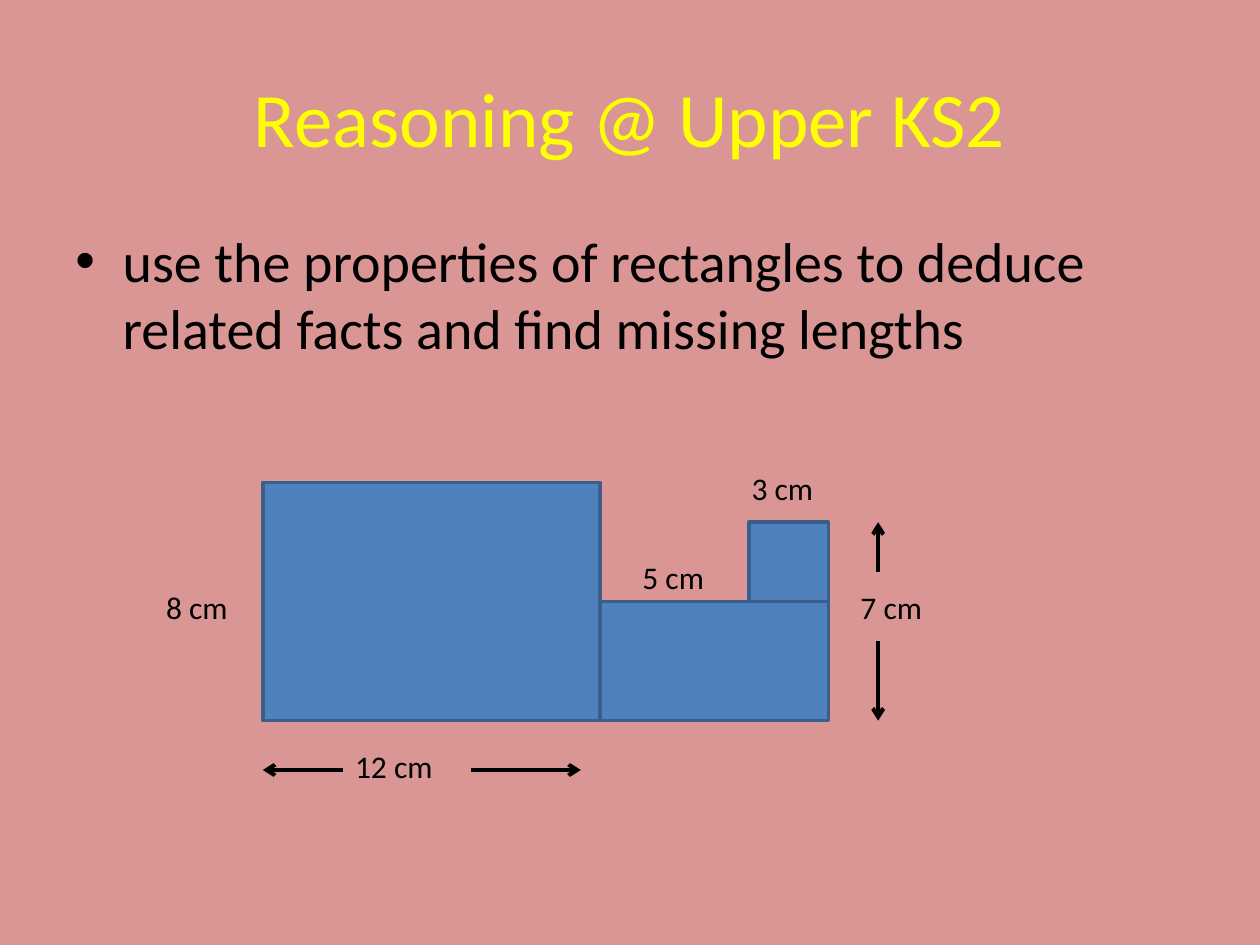
from dataclasses import dataclass

from lxml.etree import SubElement
from pptx import Presentation
from pptx.dml.color import RGBColor as Color
from pptx.enum.shapes import MSO_CONNECTOR as Connector, MSO_SHAPE as Shape
from pptx.enum.text import MSO_ANCHOR as Anchor, MSO_AUTO_SIZE as AutoSize, PP_ALIGN as Align
from pptx.oxml.ns import qn
from pptx.util import Pt


@dataclass(frozen=True)
class Theme:
    font: str = "Calibri"
    background: Color = Color(0xD9, 0x96, 0x94)
    heading: Color = Color(0xFF, 0xFF, 0x00)
    ink: Color = Color(0x00, 0x00, 0x00)
    fill: Color = Color(0x4F, 0x81, 0xBD)
    outline: Color = Color(0x3A, 0x5F, 0x8C)
    title_size: float = 44
    body_size: float = 32
    label_size: float = 18
    outline_width: float = 2
    arrow_width: float = 2.25


class SlideBuilder:
    def __init__(self, slide, theme):
        self.slide = slide
        self.theme = theme
        background = slide.background.fill
        background.solid()
        background.fore_color.rgb = theme.background

    def text(self, words, left, top, width, height, size, color):
        box = self.slide.shapes.add_textbox(Pt(left), Pt(top), Pt(width), Pt(height))
        frame = box.text_frame
        frame.word_wrap = True
        frame.text = words
        font = frame.paragraphs[0].runs[0].font
        font.name = self.theme.font
        font.size = Pt(size)
        font.color.rgb = color
        return frame

    def title(self, words, *area):
        frame = self.text(words, *area, self.theme.title_size, self.theme.heading)
        frame.vertical_anchor = Anchor.MIDDLE
        frame.paragraphs[0].alignment = Align.CENTER

    def bullet(self, words, *area):
        frame = self.text(words, *area, self.theme.body_size, self.theme.ink)
        properties = frame.paragraphs[0]._p.get_or_add_pPr()
        properties.set("marL", str(Pt(27)))
        properties.set("indent", str(Pt(-27)))
        SubElement(properties, qn("a:buFont"), typeface="Arial")
        SubElement(properties, qn("a:buChar"), char="•")

    def label(self, words, left, top, width=57):
        frame = self.text(words, left, top, width, 29, self.theme.label_size, self.theme.ink)
        frame.auto_size = AutoSize.SHAPE_TO_FIT_TEXT

    def rectangle(self, left, bottom, width, height):
        box = self.slide.shapes.add_shape(
            Shape.RECTANGLE, Pt(left), Pt(bottom - height), Pt(width), Pt(height))
        box.shadow.inherit = False
        box.fill.solid()
        box.fill.fore_color.rgb = self.theme.fill
        box.line.color.rgb = self.theme.outline
        box.line.width = Pt(self.theme.outline_width)

    def arrow(self, *ends):
        arrow = self.slide.shapes.add_connector(Connector.STRAIGHT, *map(Pt, ends))
        arrow.line.color.rgb = self.theme.ink
        arrow.line.width = Pt(self.theme.arrow_width)
        SubElement(arrow.line._get_or_add_ln(), qn("a:tailEnd"), type="arrow")
        SubElement(arrow._element.spPr, qn("a:effectLst"))


def main():
    deck = Presentation()
    deck.slide_width, deck.slide_height = Pt(720), Pt(540)
    theme = Theme()
    page = SlideBuilder(deck.slides.add_slide(deck.slide_layouts[6]), theme)

    page.title("Reasoning @ Upper KS2", 36, 21.6, 648, 90)
    page.bullet("use the properties of rectangles to deduce related facts "
                "and find missing lengths", 36, 126, 648, 356.4)

    left, middle, right, base = 150.2, 343, 473.4, 411.8
    step, square = 68, 45.4
    top = base - step - square
    page.rectangle(left, base, middle - left, 2 * step)
    page.rectangle(middle, base, right - middle, step)
    page.rectangle(right - square, base - step, square, square)

    page.label("8 cm", 87.8, 332.6)
    page.label("5 cm", 360, 315.4)
    page.label("7 cm", 484.6, 332.6)
    page.label("3 cm", 422.4, 264.2)
    page.label("12 cm", 195.8, 423.4, 68)

    across, down = 440, 501.8
    page.arrow(269.3, across, 331.9, across)
    page.arrow(195.8, across, left, across)
    page.arrow(down, 326.9, down, top)
    page.arrow(down, 366.5, down, base)

    deck.save("out.pptx")


if __name__ == "__main__":
    main()
